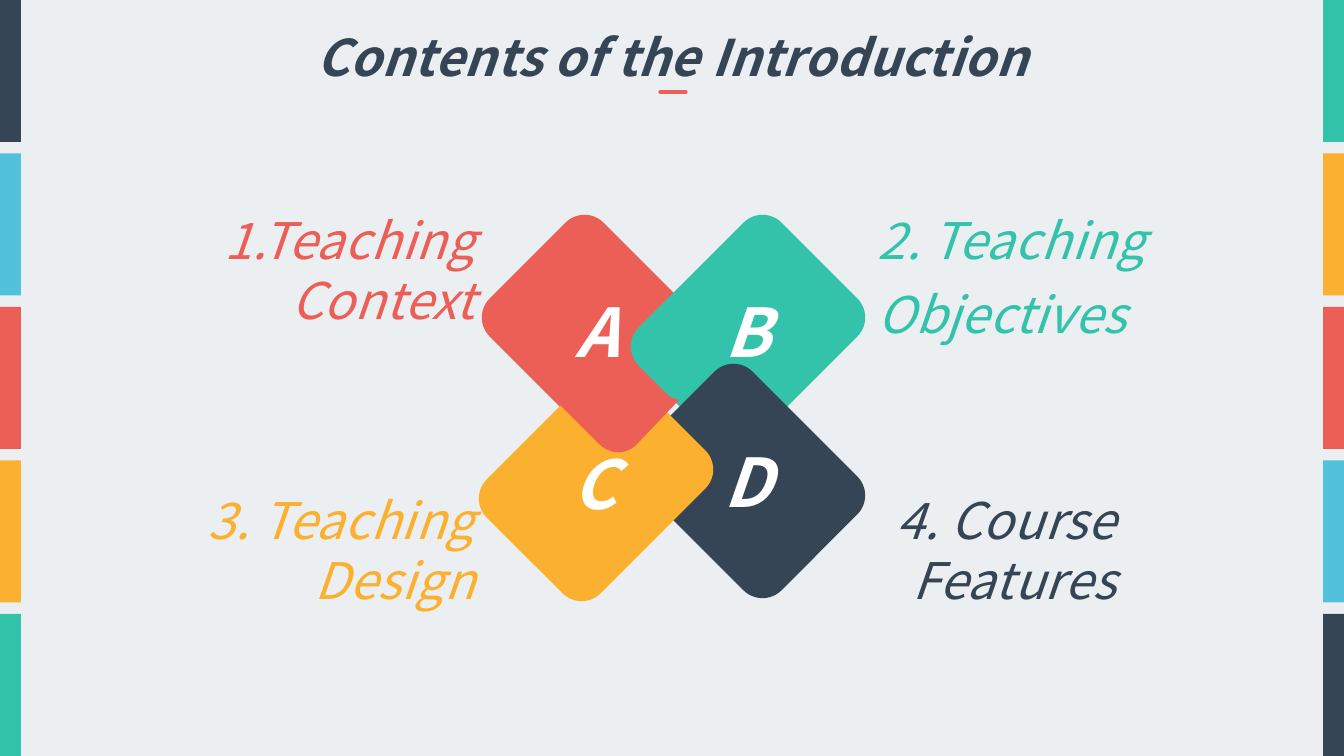
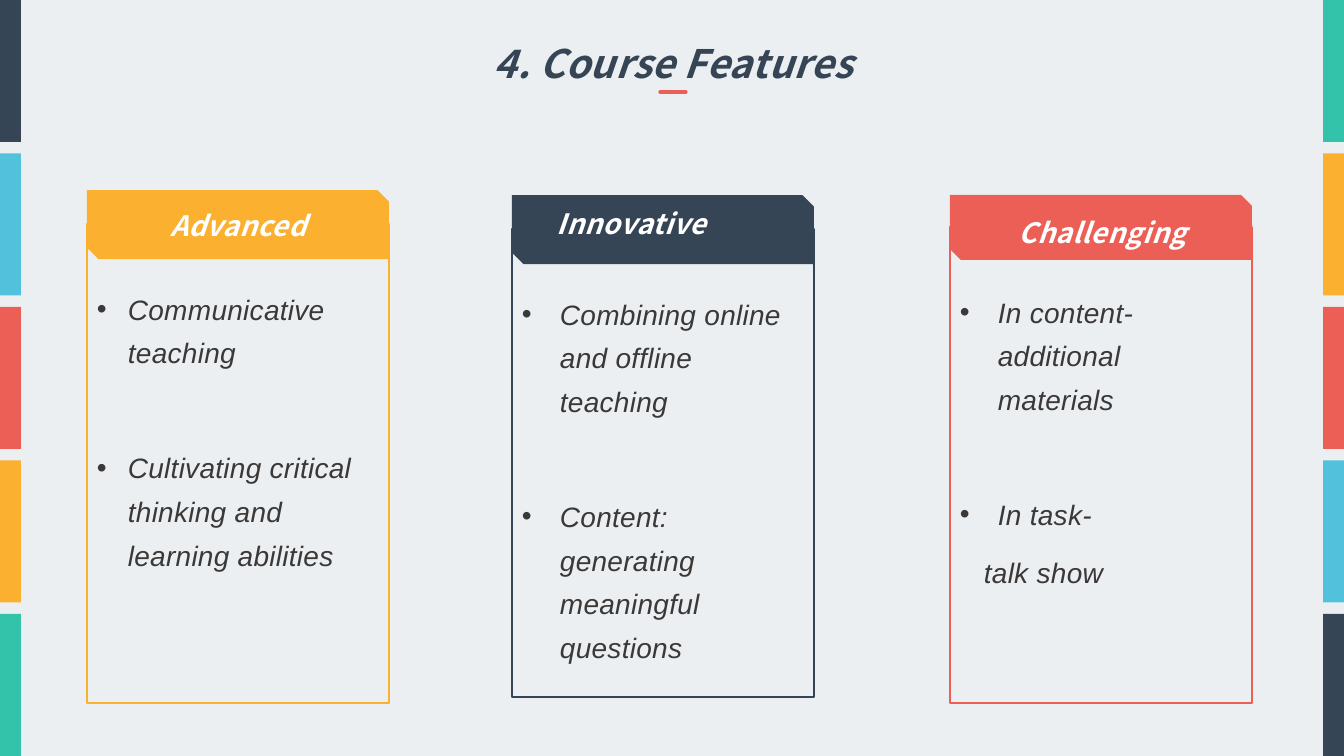
from pptx import Presentation
from pptx.dml.color import RGBColor
from pptx.enum.shapes import MSO_CONNECTOR, MSO_SHAPE
from pptx.enum.text import MSO_AUTO_SIZE, PP_ALIGN
from pptx.oxml.ns import qn
from pptx.util import Pt
from lxml.etree import SubElement

WIDE, HIGH = 1344, 756
SCALE = 914400 / 100.8
COLOURS = {
    "back": "ECEFF1", "navy": "364555", "red": "EB5F56", "teal": "33C3AB",
    "gold": "FCB030", "blue": "52C2DC", "white": "FFFFFF", "ink": "3B3838",
}
HEAD = "Noto Sans CJK SC"
BODY = "Arial"
LEFT, MID, RIGHT = PP_ALIGN.LEFT, PP_ALIGN.CENTER, PP_ALIGN.RIGHT

# Shared frame: side bands from top to bottom on the right, reversed on the left
BANDS = ["teal", "gold", "red", "blue", "navy"]
BAND_W, BAND_H = 21, 142

# Contents slide
TITLE = ("Contents of the Introduction", 36, (299, 21, 747, 72))
TOPICS = [  # lines, colour, alignment, box
    (["2. Teaching", "Objectives"], "teal", LEFT, (868, 204, 334, 131)),
    (["4. Course Features"], "navy", RIGHT, (876, 484, 250, 71)),
    (["1.Teaching Context"], "red", RIGHT, (180, 204, 305, 71)),
    (["3. Teaching Design"], "gold", RIGHT, (112, 484, 373, 71)),
]
LONG, SHORT = 202, 161
TILES = [  # colour, centre, size before the turn
    ("red", (599, 332), (LONG, SHORT)),
    ("teal", (748, 332), (SHORT, LONG)),
    ("navy", (748, 481), (LONG, SHORT)),
    ("gold", (596, 484), (SHORT, LONG)),
]
MARKS = [("B", 687, 285), ("C", 534, 437), ("D", 687, 435), ("A", 537, 285)]
FLAP = [  # one point is a corner, three points are a curve
    [(528, 373)], [(558, 373), (585, 366), (614, 366)], [(651, 378)],
    [(642, 387), (649, 390), (679, 400)], [(637, 444)],
    [(627, 455), (610, 455), (599, 444)],
]

# Features slide
TOPIC = ("4. Course Features", 28, (482, 34, 383, 57))
CARD_W = 302
CARDS = [
    dict(name="Advanced", colour="gold", x=87, frame=(224, 479), tab=(190, 69),
         label=(119, 204), top=277, hang=31,
         points=["Communicative teaching",
                 "Cultivating critical thinking and learning abilities"]),
    dict(name="Innovative", colour="navy", x=512, frame=(229, 468), tab=(195, 69),
         label=(512, 202), top=282, hang=38,
         points=["Combining online and offline teaching",
                 "Content: generating meaningful questions"]),
    dict(name="Challenging", colour="red", x=950, frame=(227, 476), tab=(195, 65),
         label=(983, 211), top=280, hang=38,
         points=["In content-additional materials", "In task-"], tail="talk show"),
]
TAIL_IN = 24


def emu(px):
    return round(px * SCALE)


def rgb(name):
    return RGBColor.from_string(COLOURS[name])


def put(part, values):
    for key, value in values.items():
        setattr(part, key, value)


def paint(shape, fill=None, line=None):
    shape.shadow.inherit = False
    if fill:
        shape.fill.solid()
        shape.fill.fore_color.rgb = rgb(fill)
    else:
        shape.fill.background()
    if line:
        shape.line.color.rgb = rgb(line)
        shape.line.width = Pt(1.25)
    else:
        shape.line.fill.background()


def block(slide, kind, box, fill=None, line=None):
    shape = slide.shapes.add_shape(kind, *map(emu, box))
    paint(shape, fill, line)
    return shape


def write(slide, box, lines, size, colour, align=MID, bold=False, font=HEAD,
          grow=True, wrap=True, forms=None):
    """Each form holds paragraph values: hang, inset, and format settings."""
    frame = slide.shapes.add_textbox(*map(emu, box)).text_frame
    frame.word_wrap = wrap
    frame.auto_size = MSO_AUTO_SIZE.SHAPE_TO_FIT_TEXT if grow else MSO_AUTO_SIZE.NONE
    for i, text in enumerate(lines):
        para = frame.paragraphs[0] if i == 0 else frame.add_paragraph()
        form = dict(forms[i]) if forms else {}
        hang, inset = form.pop("hang", 0), form.pop("inset", 0)
        put(para, {"alignment": align, "space_before": Pt(10 if i else 0), **form})
        props = para._p.get_or_add_pPr()
        if hang or inset:
            props.set("marL", str(emu(hang + inset)))
            props.set("indent", str(-emu(hang)))
        if hang:
            SubElement(props, qn("a:buFont")).set("typeface", BODY)
            SubElement(props, qn("a:buChar")).set("char", "•")
        run = para.add_run()
        run.text = text
        put(run.font, {"name": font, "size": Pt(size), "bold": bold, "italic": True})
        run.font.color.rgb = rgb(colour)
        run._r.get_or_add_rPr().set("spc", "20")


def start(deck, title):
    """Add a slide with background, title and its short rule."""
    slide = deck.slides.add_slide(deck.slide_layouts[6])
    slide.background.fill.solid()
    slide.background.fill.fore_color.rgb = rgb("back")
    text, size, box = title
    write(slide, box, [text], size, "navy", bold=True, wrap=False)
    rule = slide.shapes.add_connector(
        MSO_CONNECTOR.STRAIGHT, *map(emu, (660, 92, 686, 92)))
    rule.line.color.rgb = rgb("red")
    rule.line.width = Pt(2.25)
    props = rule.element.spPr
    props.get_or_add_ln().set("cap", "rnd")
    SubElement(props, qn("a:effectLst"))
    return slide


def edge(slide):
    """Draw the colour bands on both sides."""
    step = (HIGH - BAND_H) / (len(BANDS) - 1)
    for x, names in ((WIDE - BAND_W, BANDS), (0, BANDS[::-1])):
        for i, name in enumerate(names):
            block(slide, MSO_SHAPE.RECTANGLE, (x, i * step, BAND_W, BAND_H), name)


def bend(a, b, c, d, steps=12):
    """Points along a cubic curve, without its start."""
    for i in range(1, steps + 1):
        t = i / steps
        u = 1 - t
        yield tuple(u**3 * p + 3 * u * u * t * q + 3 * u * t * t * r + t**3 * s
                    for p, q, r, s in zip(a, b, c, d))


def trace(parts):
    dots = []
    for part in parts:
        dots += part if len(part) == 1 else bend(dots[-1], *part)
    return [(emu(x), emu(y)) for x, y in dots]


def contents(deck):
    slide = start(deck, TITLE)
    for lines, colour, align, box in TOPICS:
        write(slide, box, lines, 36, colour, align, grow=False)
    # Turned tiles and their letters
    for colour, (x, y), (w, h) in TILES:
        tile = block(slide, MSO_SHAPE.ROUNDED_RECTANGLE,
                     (x - w / 2, y - h / 2, w, h), colour)
        tile.rotation = 45
    for mark, x, y in MARKS:
        write(slide, (x, y, 121, 92), [mark], 48, "white", bold=True)
    # Red corner that overlaps the gold tile
    first, *rest = trace(FLAP)
    path = slide.shapes.build_freeform(*first)
    path.add_line_segments(rest, close=True)
    paint(path.convert_to_shape(), "red")
    edge(slide)


def features(deck):
    slide = start(deck, TOPIC)
    for card in CARDS:
        x, colour = card["x"], card["colour"]
        for kind, (y, h), fill, line in (
                (MSO_SHAPE.RECTANGLE, card["frame"], None, colour),
                (MSO_SHAPE.SNIP_2_DIAG_RECTANGLE, card["tab"], colour, None)):
            block(slide, kind, (x, y, CARD_W, h), fill, line)
        write(slide, (*card["label"], 239, 44), [card["name"]], 20, "white", bold=True)
        # Bullet points, set well apart
        lines = list(card["points"])
        forms = [{"hang": card["hang"], "line_spacing": 1.3,
                  "space_before": Pt(51 if i else 0)} for i in range(len(lines))]
        if "tail" in card:
            lines.append(card["tail"])
            forms.append({"inset": TAIL_IN, "line_spacing": 1.3})
        write(slide, (x, card["top"], CARD_W, 310), lines, 20, "ink", LEFT,
              font=BODY, forms=forms)
    edge(slide)


def main():
    deck = Presentation()
    deck.slide_width, deck.slide_height = emu(WIDE), emu(HIGH)
    contents(deck)
    features(deck)
    deck.save("out.pptx")


if __name__ == "__main__":
    main()
